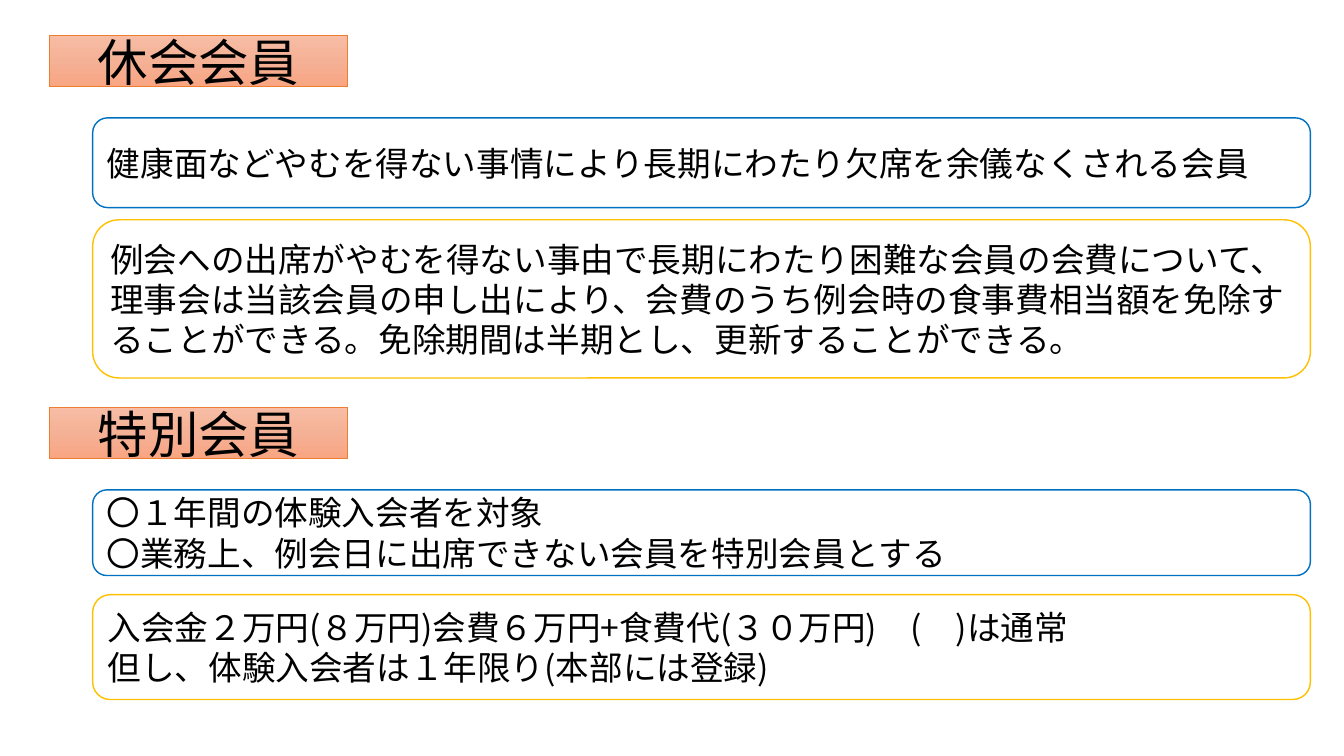
import copy
from dataclasses import dataclass

import pptx
import pptx.dml.color
import pptx.enum.shapes
import pptx.enum.text
import pptx.oxml
import pptx.oxml.ns
import pptx.shapes.autoshape
import pptx.slide
import pptx.util
from pptx.dml.color import RGBColor
from pptx.enum.text import PP_ALIGN

FONT = "Noto Sans CJK JP"
BLACK = RGBColor(0x00, 0x00, 0x00)
WHITE = RGBColor(0xFF, 0xFF, 0xFF)
BLUE = RGBColor(0x00, 0x70, 0xC0)
GOLD = RGBColor(0xFF, 0xC0, 0x00)
ORANGE = RGBColor(0xED, 0x7D, 0x31)
HEADING_GRADIENT = (
    (0, RGBColor(0xF7, 0xBD, 0xA5)),
    (0.5, RGBColor(0xF5, 0xB1, 0x96)),
    (1, RGBColor(0xF8, 0xA5, 0x82)),
)
HEADING_LEFT, HEADING_WIDTH, HEADING_HEIGHT = 35.3, 213.1, 36.7
RULE_LEFT, RULE_WIDTH = 66.2, 869.8


@dataclass(frozen=True)
class Rule:
    top: float
    height: float
    outline: RGBColor
    lines: tuple[str, ...]


@dataclass(frozen=True)
class Membership:
    name: str
    top: float
    rules: tuple[Rule, ...]


MEMBERSHIPS = (
    Membership("休会会員", 25.2, (
        Rule(84.2, 64.1, BLUE, (
            "健康面などやむを得ない事情により長期にわたり欠席を余儀なくされる会員",
        )),
        Rule(157, 113, GOLD, (
            "例会への出席がやむを得ない事由で長期にわたり困難な会員の会費について、"
            "理事会は当該会員の申し出により、会費のうち例会時の食事費相当額を免除する"
            "ことができる。免除期間は半期とし、更新することができる。",
        )),
    )),
    Membership("特別会員", 290.9, (
        Rule(349.9, 61.2, BLUE, (
            "〇１年間の体験入会者を対象",
            "〇業務上、例会日に出席できない会員を特別会員とする",
        )),
        Rule(424.8, 74.9, GOLD, (
            "入会金２万円(８万円)会費６万円+食費代(３０万円)　(　)は通常",
            "但し、体験入会者は１年限り(本部には登録)",
        )),
    )),
)


def write(shape: pptx.shapes.autoshape.Shape, lines: tuple[str, ...],
          size: float, alignment: PP_ALIGN) -> None:
    frame = shape.text_frame
    frame.text = "\n".join(lines)
    frame.word_wrap = True
    frame.auto_size = pptx.enum.text.MSO_AUTO_SIZE.NONE
    frame.vertical_anchor = pptx.enum.text.MSO_ANCHOR.MIDDLE
    for paragraph in frame.paragraphs:
        paragraph.alignment = alignment
        paragraph.font.size = pptx.util.Pt(size)
        paragraph.font.color.rgb = BLACK
        paragraph.font.name = FONT
        defaults = paragraph._p.pPr.find(pptx.oxml.ns.qn("a:defRPr"))
        east_asian = copy.deepcopy(defaults.find(pptx.oxml.ns.qn("a:latin")))
        east_asian.tag = pptx.oxml.ns.qn("a:ea")
        defaults.append(east_asian)


def format_heading(heading: pptx.shapes.autoshape.Shape, membership: Membership) -> None:
    heading.left = pptx.util.Pt(HEADING_LEFT)
    heading.top = pptx.util.Pt(membership.top)
    heading.width = pptx.util.Pt(HEADING_WIDTH)
    heading.height = pptx.util.Pt(HEADING_HEIGHT)
    heading.fill.gradient()
    heading.fill.gradient_angle = 270
    stops = heading._element.spPr.find(".//" + pptx.oxml.ns.qn("a:gsLst"))
    stops.append(copy.deepcopy(stops[0]))
    for stop, (position, color) in zip(heading.fill.gradient_stops, HEADING_GRADIENT):
        stop.position = position
        stop.color.rgb = color
    heading.line.color.rgb = ORANGE
    heading.line.width = pptx.util.Pt(0.5)
    write(heading, (membership.name,), 36, PP_ALIGN.CENTER)


def add_box(slide: pptx.slide.Slide, kind: pptx.enum.shapes.MSO_SHAPE, left: float,
            top: float, width: float, height: float) -> pptx.shapes.autoshape.Shape:
    box = slide.shapes.add_shape(
        kind, pptx.util.Pt(left), pptx.util.Pt(top),
        pptx.util.Pt(width), pptx.util.Pt(height))
    box.shadow.inherit = False
    return box


def add_rule(slide: pptx.slide.Slide, rule: Rule) -> None:
    box = add_box(slide, pptx.enum.shapes.MSO_SHAPE.ROUNDED_RECTANGLE,
                  RULE_LEFT, rule.top, RULE_WIDTH, rule.height)
    box.fill.solid()
    box.fill.fore_color.rgb = WHITE
    box.line.color.rgb = rule.outline
    box.line.width = pptx.util.Pt(1)
    write(box, rule.lines, 24, PP_ALIGN.LEFT)


def main() -> None:
    presentation = pptx.Presentation()
    presentation.slide_width = pptx.util.Pt(960)
    presentation.slide_height = pptx.util.Pt(540)
    slide = presentation.slides.add_slide(presentation.slide_layouts.get_by_name("Title Only"))
    for index, membership in enumerate(MEMBERSHIPS):
        if index == 0:
            heading = slide.shapes.title
        else:
            heading = add_box(slide, pptx.enum.shapes.MSO_SHAPE.RECTANGLE, HEADING_LEFT,
                              membership.top, HEADING_WIDTH, HEADING_HEIGHT)
        format_heading(heading, membership)
        for rule in membership.rules:
            add_rule(slide, rule)
    presentation.save("out.pptx")


if __name__ == "__main__":
    main()
